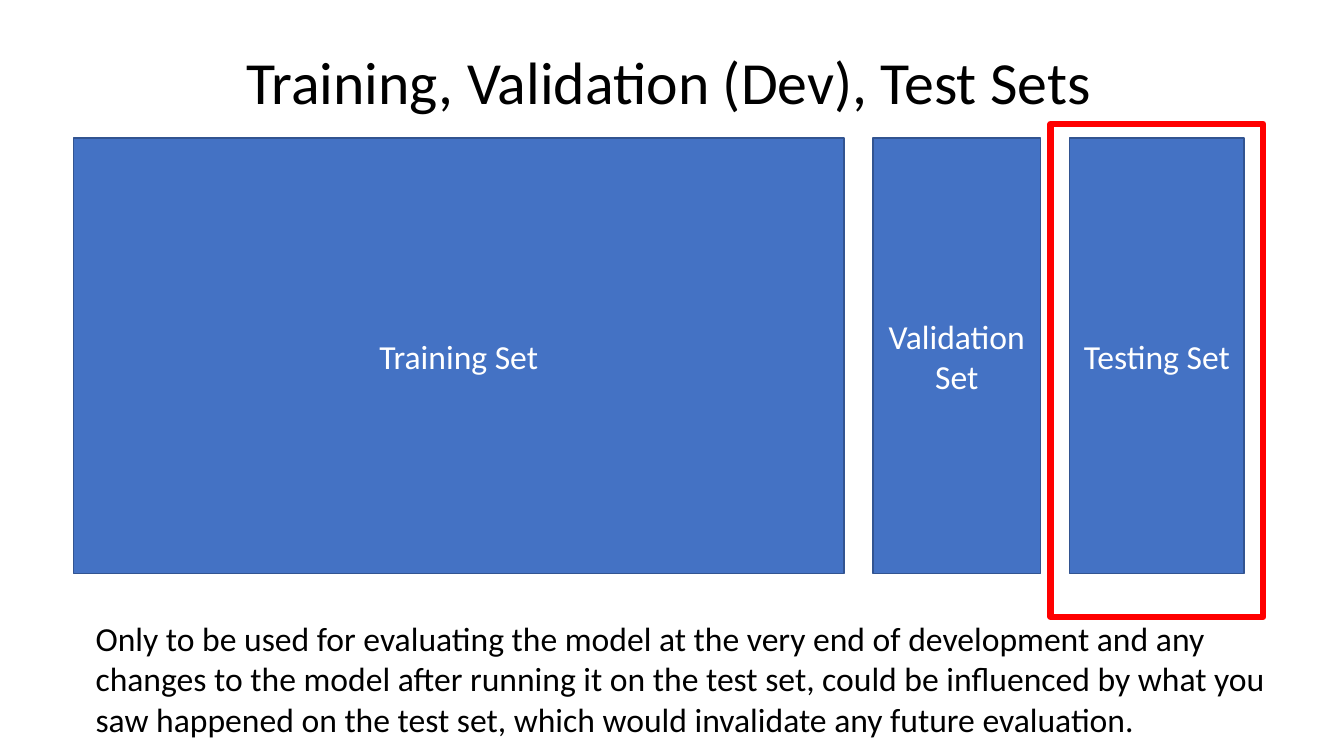
from typing import NamedTuple

from pptx import Presentation
from pptx.dml.color import RGBColor
from pptx.enum import shapes, text
from pptx.util import Inches, Pt

FONT = "Calibri"
TITLE = "Training, Validation (Dev), Test Sets"
NOTE = ("Only to be used for evaluating the model at the very end of development "
        "and any changes to the model after running it on the test set, could be "
        "influenced by what you saw happened on the test set, which would "
        "invalidate any future evaluation.")
SETS_TOP, SETS_HEIGHT = 1.37, 4.32


class DataSet(NamedTuple):
    label: str
    left: float
    width: float


DATA_SETS = [
    DataSet("Training Set", 0.73, 7.64),
    DataSet("Validation Set", 8.66, 1.66),
    DataSet("Testing Set", 10.61, 1.73),
]


def rgb(color: str) -> RGBColor:
    return RGBColor.from_string(color)


def write(tf, words: str, size: float, color: str, align) -> None:
    tf.word_wrap = True
    p = tf.paragraphs[0]
    p.alignment = align
    r = p.add_run()
    r.text = words
    r.font.name = FONT
    r.font.size = Pt(size)
    r.font.color.rgb = rgb(color)


def add_box(s, left: float, top: float, width: float, height: float,
            line: str, weight: float, fill: str | None = None):
    """Add a rectangle, hollow unless a fill is given."""
    sp = s.shapes.add_shape(shapes.MSO_SHAPE.RECTANGLE, Inches(left), Inches(top),
                            Inches(width), Inches(height))
    sp.shadow.inherit = False
    if fill:
        sp.fill.solid()
        sp.fill.fore_color.rgb = rgb(fill)
    else:
        sp.fill.background()
    sp.line.color.rgb = rgb(line)
    sp.line.width = Pt(weight)
    return sp


def add_title(s) -> None:
    sp = s.shapes.title
    sp.left, sp.top = Inches(-0.07), Inches(0.37)
    sp.width, sp.height = Inches(13.41), Inches(0.85)
    tf = sp.text_frame
    tf.margin_left = tf.margin_right = tf.margin_top = tf.margin_bottom = 0
    tf.auto_size = text.MSO_AUTO_SIZE.NONE
    tf.vertical_anchor = text.MSO_ANCHOR.MIDDLE
    write(tf, TITLE, 42.7, "000000", text.PP_ALIGN.CENTER)


def add_note(s) -> None:
    sp = s.shapes.add_textbox(Inches(0.85), Inches(6.08), Inches(12.24), Inches(1.31))
    write(sp.text_frame, NOTE, 24, "000000", text.PP_ALIGN.LEFT)
    sp.text_frame.auto_size = text.MSO_AUTO_SIZE.SHAPE_TO_FIT_TEXT


def add_data_set(s, data_set: DataSet) -> None:
    sp = add_box(s, data_set.left, SETS_TOP, data_set.width, SETS_HEIGHT,
                 "325491", 1, "4472C4")
    sp.text_frame.vertical_anchor = text.MSO_ANCHOR.MIDDLE
    write(sp.text_frame, data_set.label, 24, "FFFFFF", text.PP_ALIGN.CENTER)


def main() -> None:
    prs = Presentation()
    prs.slide_width, prs.slide_height = Inches(13.33), Inches(7.5)
    s = prs.slides.add_slide(prs.slide_layouts.get_by_name("Title Only"))
    add_title(s)
    add_box(s, 10.42, 1.23, 2.11, 4.89, "FF0000", 4.5)
    add_note(s)
    for data_set in DATA_SETS:
        add_data_set(s, data_set)
    prs.save("out.pptx")


if __name__ == "__main__":
    main()
